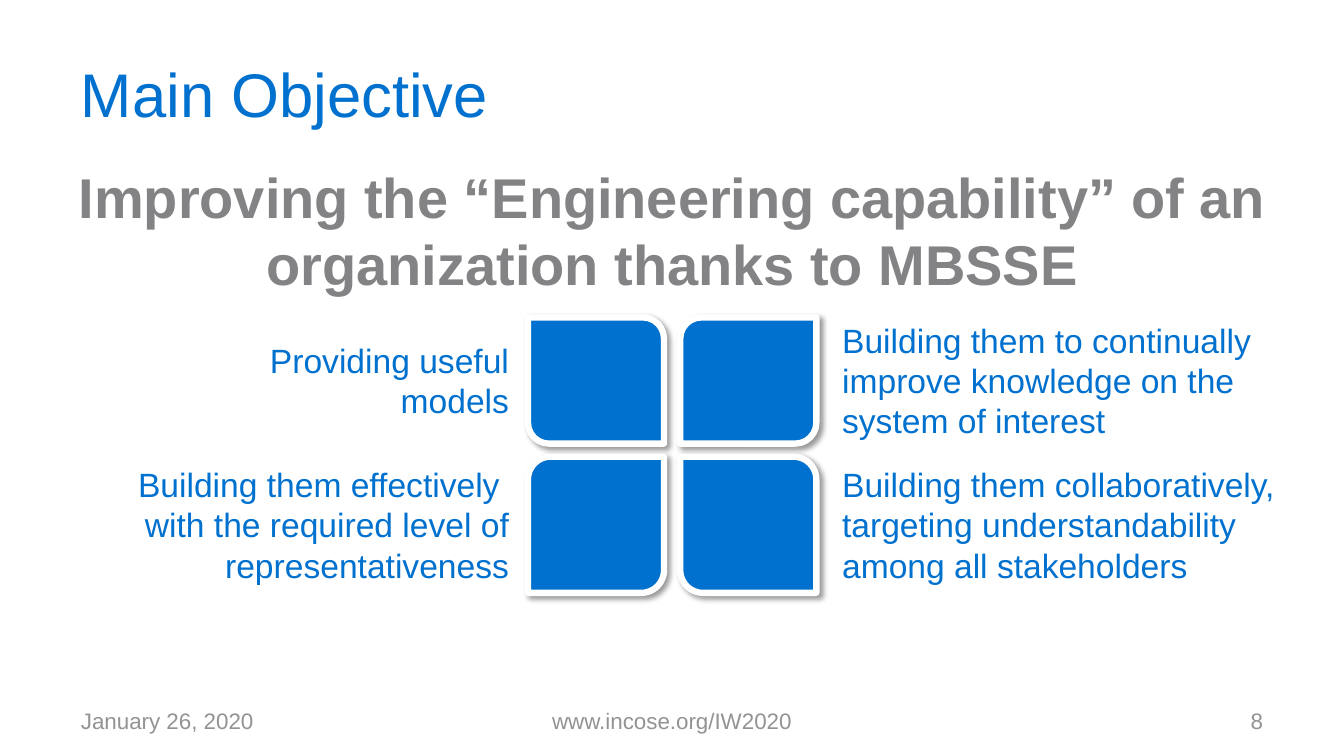
from dataclasses import dataclass

from lxml import etree
from pptx import Presentation
from pptx.dml.color import RGBColor
from pptx.enum import shapes, text
from pptx.oxml import ns
from pptx.util import Cm, Pt


@dataclass(frozen=True)
class Theme:
    font: str = "Arial"
    blue: RGBColor = RGBColor(0x00, 0x71, 0xCE)
    gray: RGBColor = RGBColor(0x83, 0x82, 0x85)
    footer_gray: RGBColor = RGBColor(0x93, 0x93, 0x93)
    white: RGBColor = RGBColor(0xFF, 0xFF, 0xFF)
    title_size: int = 44
    goal_size: int = 40
    body_size: int = 24
    footer_size: int = 16


theme = Theme()
LEFT, CENTER, RIGHT = text.PP_ALIGN.LEFT, text.PP_ALIGN.CENTER, text.PP_ALIGN.RIGHT
TOP, MIDDLE = text.MSO_ANCHOR.TOP, text.MSO_ANCHOR.MIDDLE


def write(box, words, size=theme.body_size, color=theme.blue, bold=False,
          align=LEFT, anchor=TOP, inset=(0.25, 0.13)):
    frame = box.text_frame
    frame.word_wrap = True
    frame.vertical_anchor = anchor
    frame.margin_left = frame.margin_right = Cm(inset[0])
    frame.margin_top = frame.margin_bottom = Cm(inset[1])
    frame.text = words
    paragraph = frame.paragraphs[0]
    paragraph.alignment = align
    for run in paragraph.runs:
        run.font.name = theme.font
        run.font.size = Pt(size)
        run.font.bold = bold
        run.font.color.rgb = color


def cast_shadow(tile):
    """Add a soft black shadow to the lower right."""
    tile.shadow.inherit = False
    effects = tile._element.spPr.find(ns.qn("a:effectLst"))
    shadow = etree.SubElement(effects, ns.qn("a:outerShdw"), blurRad=str(Pt(4)),
                              dist=str(Pt(3)), dir="2700000", algn="tl", rotWithShape="0")
    black = etree.SubElement(shadow, ns.qn("a:srgbClr"), val="000000")
    etree.SubElement(black, ns.qn("a:alpha"), val="40000")


deck = Presentation()
deck.slide_width, deck.slide_height = Cm(33.88), Cm(19.05)
slide = deck.slides.add_slide(deck.slide_layouts[5])

title = slide.shapes.title
title.left, title.top, title.width, title.height = Cm(1.7), Cm(0.76), Cm(30.5), Cm(3.18)
wide_inset = (0.34, 0.18)
write(title, "Main Objective", size=theme.title_size, anchor=MIDDLE, inset=wide_inset)

footers = [
    ("January 26, 2020", 1.7, 7.9, LEFT),
    ("www.incose.org/IW2020", 11.58, 10.72, CENTER),
    ("8", 24.28, 7.9, RIGHT),
]
for words, left, width, align in footers:
    footer = slide.shapes.add_textbox(Cm(left), Cm(17.65), Cm(width), Cm(1.02))
    write(footer, words, size=theme.footer_size, color=theme.footer_gray,
          align=align, anchor=MIDDLE, inset=wide_inset)

# Rounded corners of the four tiles alternate between the two diagonals
tiles = slide.shapes.add_group_shape()
for row, (top, height) in enumerate([(8, 3.18), (11.51, 3.43)]):
    for column, left in enumerate([13.31, 17.15]):
        tile = tiles.shapes.add_shape(shapes.MSO_SHAPE.ROUND_2_DIAG_RECTANGLE,
                                      Cm(left), Cm(top), Cm(3.43), Cm(height))
        falling = row != column
        tile.adjustments[0] = 0.16667 if falling else 0
        tile.adjustments[1] = 0 if falling else 0.16667
        tile.fill.solid()
        tile.fill.fore_color.rgb = theme.blue
        tile.line.color.rgb = theme.white
        tile.line.width = Pt(4.5)
        cast_shadow(tile)

goal = slide.shapes.add_textbox(Cm(0.97), Cm(3.96), Cm(31.95), Cm(3.68))
write(goal, "Improving the “Engineering capability” of an organization thanks to MBSSE",
      size=theme.goal_size, color=theme.gray, bold=True, align=CENTER)

objectives = [
    ("Providing useful models", 4.27, 8.43, 8.81, 2.31, RIGHT),
    ("Building them effectively \vwith the required level of representativeness",
     0.18, 11.56, 12.9, 3.33, RIGHT),
    ("Building them to continually improve knowledge on the system of interest",
     20.98, 7.92, 12.9, 3.33, LEFT),
    ("Building them collaboratively, targeting understandability among all stakeholders",
     20.98, 11.56, 12.9, 3.33, LEFT),
]
for words, left, top, width, height, align in objectives:
    objective = slide.shapes.add_textbox(Cm(left), Cm(top), Cm(width), Cm(height))
    write(objective, words, align=align)

deck.save("out.pptx")
